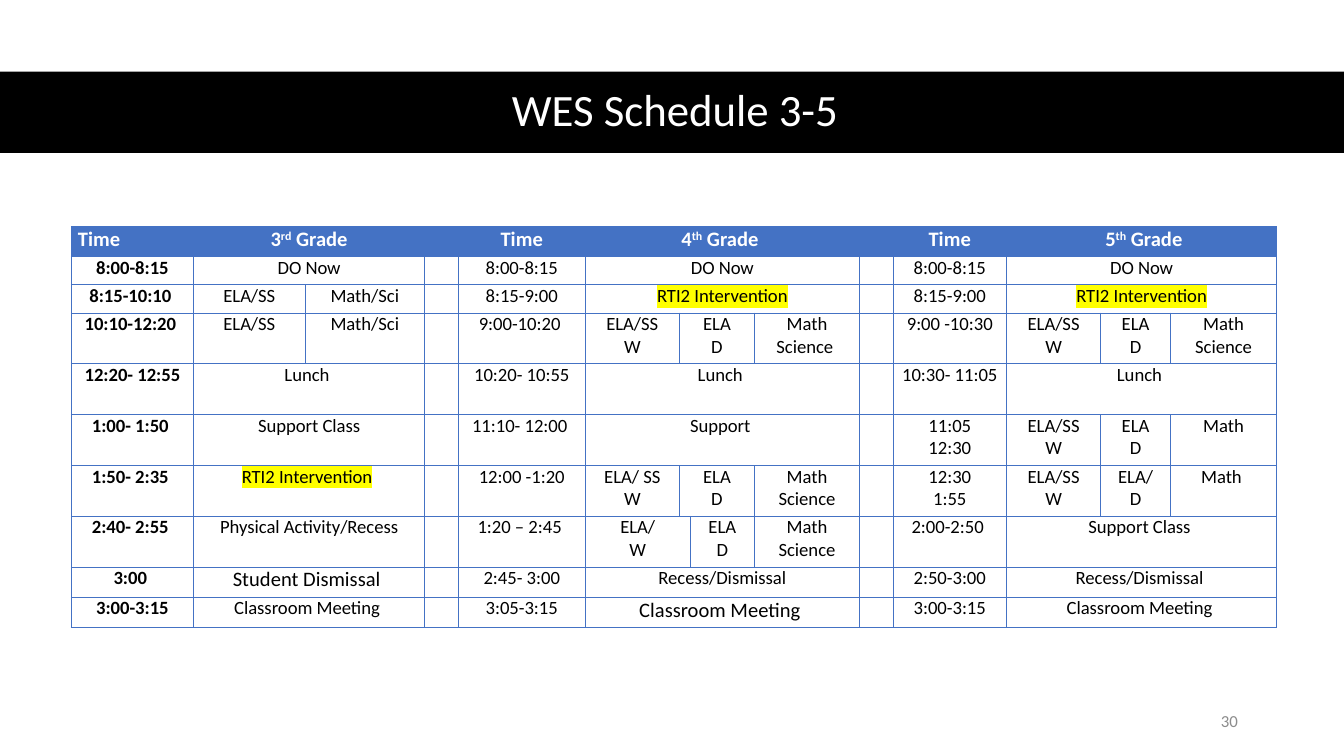
"""Build the school timetable slide for grades three to five."""
from dataclasses import dataclass
from typing import Any, NamedTuple, Optional

from lxml.etree import SubElement
from pptx import Presentation
from pptx.dml.color import RGBColor
from pptx.enum.shapes import MSO_SHAPE
from pptx.enum.text import MSO_ANCHOR, MSO_AUTO_SIZE, PP_ALIGN
from pptx.oxml.ns import qn
from pptx.util import Inches, Pt

INK = {"band": "000000", "head": "4472C4", "light": "FFFFFF",
       "text": "000000", "mark": "FFFF00", "page": "8C8C8C"}
FONT = "Calibri"
WIDE = Inches(10)
HIGH = WIDE * 9 // 16
ACROSS = 1000
MARK = "RTI2 Intervention"
COLS = (91, 83, 89, 25, 94.5, 70, 8, 48, 78, 25, 84.5, 70, 52, 79)
ROWS = (22.5, 21, 21) + (37.8,) * 5 + (22.5, 22.5)
INSET = {"margin_left": Inches(0.05), "margin_right": Inches(0.05),
         "margin_top": 0, "margin_bottom": 0}
FRAME = {"word_wrap": True, "auto_size": MSO_AUTO_SIZE.NONE,
         "vertical_anchor": MSO_ANCHOR.MIDDLE}


class Box(NamedTuple):
    """Hold a place in square grid units."""
    left: float
    top: float
    width: float
    height: float


class Look(NamedTuple):
    """Hold the format of a text."""
    size: int
    ink: str
    bold: bool = False
    align: Any = PP_ALIGN.CENTER


@dataclass
class Slot:
    """Describe one time slot with its lessons."""
    time: str
    tasks: tuple[str, ...]
    cuts: Optional[tuple[int, ...]] = None
    size: int = 10


@dataclass
class Grade:
    """Describe the block of one grade."""
    name: str
    col: int
    cuts: tuple[int, ...]
    slots: tuple[Slot, ...]


TRIO = ("ELA/SS\nW", "ELA\nD", "Math\nScience")
PAIR = ("ELA/SS", "Math/Sci")
GRADES = (
    Grade("3|rd| Grade", 0, (1, 1), (
        Slot("8:00-8:15", ("DO Now",)),
        Slot("8:15-10:10 ", PAIR),
        Slot("10:10-12:20 ", PAIR),
        Slot("12:20- 12:55", ("Lunch ",)),
        Slot("1:00- 1:50 ", ("Support Class",)),
        Slot("1:50- 2:35 ", (MARK + "| ",)),
        Slot("2:40- 2:55 ", ("Physical Activity/Recess",)),
        Slot("3:00 ", ("Student Dismissal ",), size=11),
        Slot("3:00-3:15", ("Classroom Meeting ",)))),
    Grade("4|th| Grade ", 4, (1, 2, 1), (
        Slot("8:00-8:15", ("DO Now",)),
        Slot("8:15-9:00", (MARK,)),
        Slot("9:00-10:20 ", TRIO[:2] + ("Math\nScience ",)),
        Slot("10:20- 10:55", ("Lunch ",)),
        Slot("11:10- 12:00 ", ("Support ",)),
        Slot("12:00 -1:20", ("ELA/ SS\nW",) + TRIO[1:]),
        Slot("1:20 – 2:45 ", ("ELA/\nW",) + TRIO[1:], (2, 1, 1)),
        Slot("2:45- 3:00", ("Recess/Dismissal",)),
        Slot("3:05-3:15", ("Classroom Meeting ",), size=11))),
    Grade(" 5|th| Grade", 10, (1, 1, 1), (
        Slot("8:00-8:15", ("DO Now",)),
        Slot("8:15-9:00", (MARK,)),
        Slot("9:00 -10:30", TRIO),
        Slot("10:30- 11:05", ("Lunch ",)),
        Slot("11:05\n12:30", TRIO[:2] + ("Math",)),
        Slot("12:30\n1:55", ("ELA/SS\nW", "ELA/\nD", "Math ")),
        Slot("2:00-2:50 ", ("Support Class ",)),
        Slot("2:50-3:00", ("Recess/Dismissal ",)),
        Slot("3:00-3:15", ("Classroom Meeting ",)))),
)


def apply(item: Any, form: dict[str, Any]) -> None:
    """Set each format value on an item."""
    for key, value in form.items():
        setattr(item, key, value)


def span_of(count: float) -> int:
    """Turn grid units into a length."""
    return int(WIDE * count / ACROSS)


def scale(box: Box) -> tuple[int, ...]:
    """Turn a box into slide lengths."""
    return tuple(map(span_of, box))


def write(frame: Any, text: str, look: Look, **form: Any) -> None:
    """Fill a frame, raising every second part between bars."""
    frame.text = ""
    for row, line in enumerate(text.split("\n")):
        para = frame.add_paragraph() if row else frame.paragraphs[0]
        apply(para, {"alignment": look.align, **form})
        for turn, part in enumerate(line.split("|")):
            run = para.add_run()
            run.text = part
            apply(run.font, {"size": Pt(look.size), "bold": look.bold, "name": FONT})
            run.font.color.rgb = RGBColor.from_string(INK[look.ink])
            props = run.font._element
            if turn % 2 and part.strip():
                props.set("baseline", "30000")
            if part == MARK:
                glow = SubElement(props, qn("a:highlight"))
                SubElement(glow, qn("a:srgbClr"), val=INK["mark"])
                props.find(qn("a:solidFill")).addnext(glow)


def dress(cell: Any, head: bool) -> None:
    """Give a cell its insets, borders and fill."""
    apply(cell, INSET)
    props = cell._tc.get_or_add_tcPr()
    for side in "LRTB":
        edge = SubElement(props, qn(f"a:ln{side}"), w=str(Pt(0.5)))
        SubElement(SubElement(edge, qn("a:solidFill")), qn("a:srgbClr"), val=INK["head"])
    if head:
        cell.fill.solid()
        cell.fill.fore_color.rgb = RGBColor.from_string(INK["head"])
    else:
        cell.fill.background()
    SubElement(cell.text_frame.paragraphs[0]._p, qn("a:endParaRPr"), sz="1000")


def fill(table: Any, row: int, col: int, span: int, text: str, look: Look) -> None:
    """Merge a span of cells and write in it."""
    cell = table.cell(row, col)
    if span > 1:
        cell.merge(table.cell(row, col + span - 1))
    write(cell.text_frame, text, look)


def plot(table: Any, grade: Grade) -> None:
    """Write the block of one grade."""
    first = grade.col == 0
    side = PP_ALIGN.LEFT if first else PP_ALIGN.CENTER
    whole = sum(grade.cuts)
    fill(table, 0, grade.col, 1, "Time", Look(11, "light", True, side))
    fill(table, 0, grade.col + 1, whole, grade.name, Look(11, "light", True))
    for row, slot in enumerate(grade.slots, 1):
        fill(table, row, grade.col, 1, slot.time, Look(10, "text", first))
        cuts = (slot.cuts or grade.cuts) if len(slot.tasks) > 1 else (whole,)
        col = grade.col + 1
        for task, span in zip(slot.tasks, cuts):
            fill(table, row, col, span, task, Look(slot.size, "text"))
            col += span


def main() -> None:
    """Build and save the slide."""
    deck = Presentation()
    apply(deck, {"slide_width": WIDE, "slide_height": HIGH})
    slide = deck.slides.add_slide(deck.slide_layouts[5])
    shapes = slide.shapes

    title = shapes.title
    apply(title, dict(zip(("left", "top", "width", "height"), scale(Box(46, 53, 920, 61)))))
    apply(title.text_frame, FRAME)
    write(title.text_frame, "WES Schedule 3-5 ", Look(24, "light"), line_spacing=0.9)

    band = shapes.add_shape(MSO_SHAPE.RECTANGLE, *scale(Box(0, 53.4, 1000, 60.4)))
    band.shadow.inherit = False
    band.fill.solid()
    band.fill.fore_color.rgb = RGBColor.from_string(INK["band"])
    band.line.fill.background()
    title._element.addprevious(band._element)

    page = shapes.add_textbox(*scale(Box(706, 521, 225, 30)))
    apply(page.text_frame, FRAME)
    write(page.text_frame, "30", Look(9, "page", align=PP_ALIGN.RIGHT), space_after=Pt(6))

    place = Box(53, 168.5, sum(COLS), sum(ROWS))
    table = shapes.add_table(len(ROWS), len(COLS), *scale(place)).table
    apply(table, {"horz_banding": False, "first_row": False})
    for col, width in zip(table.columns, COLS):
        col.width = span_of(width)
    for index, (row, height) in enumerate(zip(table.rows, ROWS)):
        row.height = span_of(height)
        for cell in row.cells:
            dress(cell, index == 0)
    for grade in GRADES:
        plot(table, grade)
    deck.save("out.pptx")


if __name__ == "__main__":
    main()
